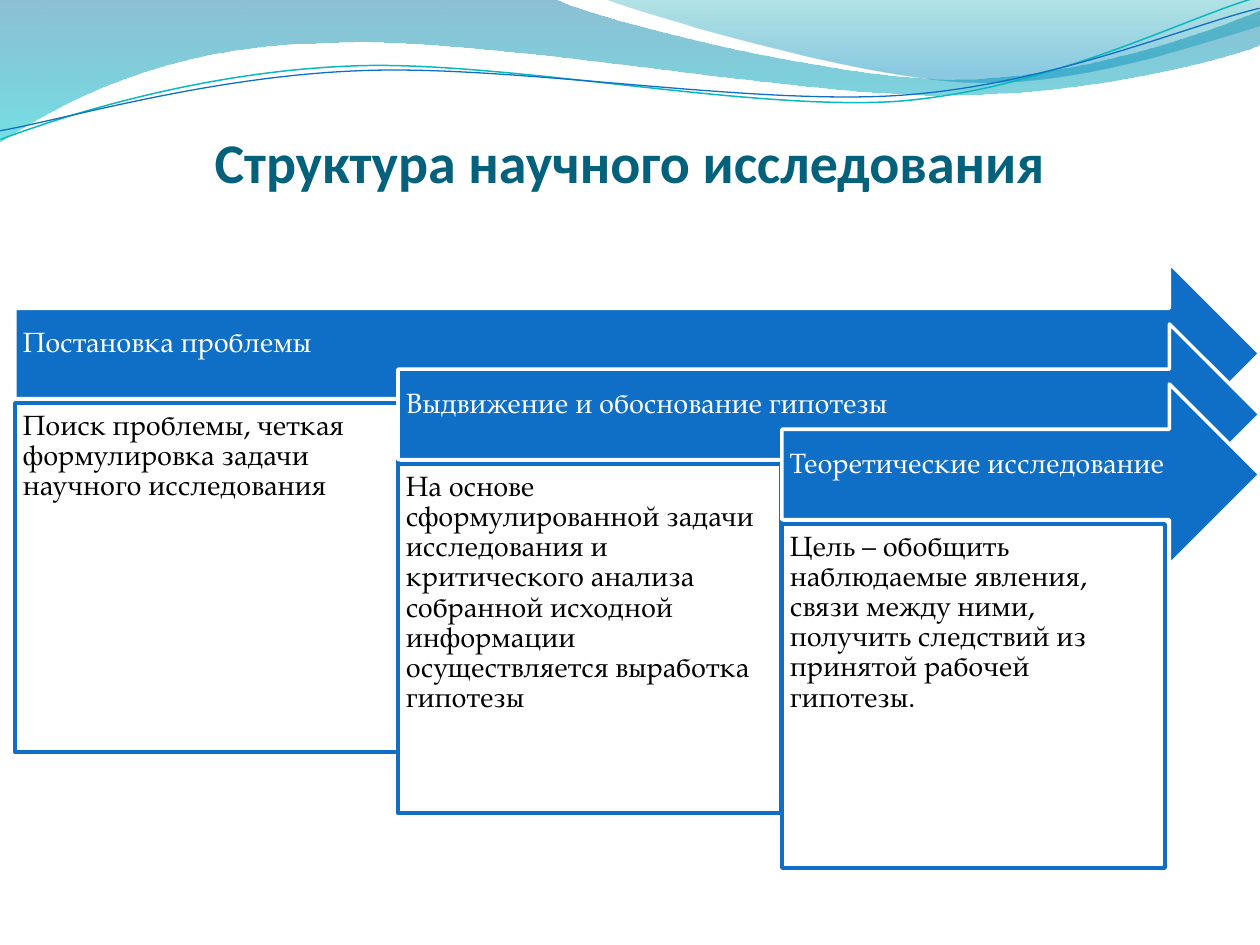
from dataclasses import dataclass

from lxml import etree
from pptx import Presentation
from pptx.dml.color import RGBColor
from pptx.enum.shapes import MSO_SHAPE
from pptx.enum.text import MSO_ANCHOR, PP_ALIGN
from pptx.oxml.ns import qn
from pptx.util import Emu, Pt

ARROW, RECTANGLE = MSO_SHAPE.RIGHT_ARROW, MSO_SHAPE.RECTANGLE
TOP, MIDDLE, BOTTOM = MSO_ANCHOR.TOP, MSO_ANCHOR.MIDDLE, MSO_ANCHOR.BOTTOM
LEFT, CENTER = PP_ALIGN.LEFT, PP_ALIGN.CENTER
PAGE_WIDTH, PAGE_HEIGHT = 1260, 945
PX_PER_INCH = 126
STRAND_ROTATION = 357.3


@dataclass(frozen=True)
class Theme:
    blue: str = "0F6FC6"
    teal: str = "0AB8BF"
    heading: str = "04617B"
    white: str = "FFFFFF"
    black: str = "000000"
    heading_font: str = "Calibri"
    body_font: str = "TeX Gyre Pagella"
    heading_size: int = 32
    body_size: int = 16
    outline: int = 2


THEME = Theme()

# Each path is a start point followed by segments:
# one point for a straight line, three points for a Bezier curve.
# Gradient stops are (position, colour, opacity in percent), top to bottom.
WAVES = [
    ((0, 0), [
        [(554, -1)],
        [(600, 21), (837, 79), (955, 79)],
        [(1075, 79), (1207, 33), (1260, 11)],
        [(1261, 45)],
        [(1238, 55), (1096, 96), (940, 95)],
        [(784, 95), (481, 35), (324, 43)],
        [(163, 45), (58, 105), (-1, 142)],
        [(0, 0)],
    ], [(0, "0074A1", 45), (1, "00C6CF", 55)]),
    ((604, -1), [
        [(641, 14), (859, 78), (969, 82)],
        [(1079, 87), (1211, 40), (1260, 26)],
        [(1260, 0)],
        [(604, -1)],
    ], [(0, "00A1A9", 30), (0.8, "008BBF", 45)]),
]
# Strand points are given before rotation
STRANDS = [
    ((-2, 110), [
        [(59, 90), (199, 52), (350, 53)],
        [(499, 53), (745, 117), (896, 114)],
        [(1049, 109), (1184, 45), (1260, 27)],
    ], THEME.teal, 0.85),
    ((-2, 101), [
        [(57, 94), (207, 57), (357, 58)],
        [(509, 58), (750, 112), (902, 108)],
        [(1052, 104), (1188, 52), (1262, 38)],
    ], THEME.blue, 0.75),
]
# Arrow label, card text, card height
STAGES = [
    ("Постановка проблемы",
     "Поиск проблемы, четкая формулировка задачи научного исследования", 349),
    ("Выдвижение и обоснование гипотезы",
     "На основе сформулированной задачи исследования и критического анализа "
     "собранной исходной информации осуществляется выработка гипотезы", 349),
    ("Теоретические исследование",
     "Цель – обобщить наблюдаемые явления, связи между ними, получить "
     "следствий из принятой рабочей гипотезы.", 344),
]


def px(length):
    return Emu(round(length * 914400 / PX_PER_INCH))


def apply_format(target, values):
    for name, value in values.items():
        setattr(target, name, value)


def write_text(shape, text, font, color, insets, anchor, align=LEFT, spacing=1.0):
    frame = shape.text_frame
    sides = ("margin_left", "margin_top", "margin_right", "margin_bottom")
    apply_format(frame, {side: px(inset) for side, inset in zip(sides, insets)})
    apply_format(frame, {"word_wrap": True, "vertical_anchor": anchor})
    para = frame.paragraphs[0]
    apply_format(para, {"alignment": align, "line_spacing": spacing})
    span = para.add_run()
    span.text = text
    apply_format(span.font, font)
    span.font.color.rgb = RGBColor.from_string(color)


def add_path(page, start, segments, close):
    vertices = [(px(x), px(y)) for segment in segments for x, y in segment]
    builder = page.shapes.build_freeform(*map(px, start), scale=1.0)
    builder.add_line_segments(vertices, close=close)
    shape = builder.convert_to_shape()
    shape.shadow.inherit = False
    # Merge each triple of line points into one curve
    lines = iter(list(shape.element.iter(qn("a:lnTo"))))
    for segment in segments:
        group = [next(lines) for _ in segment]
        if len(group) == 3:
            curve = etree.Element(qn("a:cubicBezTo"))
            group[0].addprevious(curve)
            for line in group:
                curve.append(line[0])
                line.getparent().remove(line)
    return shape


def fill_gradient(shape, stops):
    shape.fill.gradient()
    shape.fill.gradient_angle = 270
    for stop, (position, color, _) in zip(shape.fill.gradient_stops, stops):
        stop.position = position
        stop.color.rgb = RGBColor.from_string(color)
    marks = shape.element.iter(qn("a:gs"))
    for mark, (_, _, opacity) in zip(marks, stops):
        etree.SubElement(mark[0], qn("a:alpha"), val=str(opacity * 1000))


def add_header_waves(page):
    # Translucent bands
    for start, segments, stops in WAVES:
        band = add_path(page, start, segments, close=True)
        fill_gradient(band, stops)
        band.line.fill.background()
    # Thin strands
    for start, segments, color, width in STRANDS:
        strand = add_path(page, start, segments, close=False)
        strand.rotation = STRAND_ROTATION
        strand.fill.background()
        strand.line.color.rgb = RGBColor.from_string(color)
        strand.line.width = Pt(width)


def add_title(page, left, top, width, height):
    box = page.shapes.add_textbox(*map(px, (left, top, width, height)))
    font = {"name": THEME.heading_font, "size": Pt(THEME.heading_size), "bold": True}
    write_text(box, "Структура научного исследования", font, THEME.heading,
               (0, 6, 0, 0), BOTTOM, CENTER)


def add_panel(page, preset, bounds, fill, outline, text, color, insets, anchor):
    panel = page.shapes.add_shape(preset, *map(px, bounds))
    panel.shadow.inherit = False
    panel.fill.solid()
    panel.fill.fore_color.rgb = RGBColor.from_string(fill)
    panel.line.color.rgb = RGBColor.from_string(outline)
    panel.line.width = Pt(THEME.outline)
    font = {"name": THEME.body_font, "size": Pt(THEME.body_size)}
    write_text(panel, text, font, color, insets, anchor, spacing=0.9)


def add_stages(page, left, top, width):
    card_width, arrow_height, card_offset = 383, 181, 140
    for index, (label, body, card_height) in enumerate(STAGES):
        # Two steps span 767 px across and 121 px down
        shift = index * 767 // 2
        x, y = left + shift, top + (index * 121 + 1) // 2
        # Arrow reaching the right edge
        add_panel(page, ARROW, (x, y, width - shift, arrow_height), THEME.blue,
                  THEME.white, label, THEME.white, (8, 8, 35, 28), MIDDLE)
        # Card below the arrow shaft
        add_panel(page, RECTANGLE, (x, y + card_offset, card_width, card_height),
                  THEME.white, THEME.blue, body, THEME.black, (8, 8, 8, 8), TOP)


def main():
    deck = Presentation()
    deck.slide_width, deck.slide_height = px(PAGE_WIDTH), px(PAGE_HEIGHT)
    page = deck.slides.add_slide(deck.slide_layouts[6])
    add_header_waves(page)
    add_title(page, 63, 97, 1134, 98)
    add_stages(page, 15, 263, 1245)
    deck.save("out.pptx")


if __name__ == "__main__":
    main()
